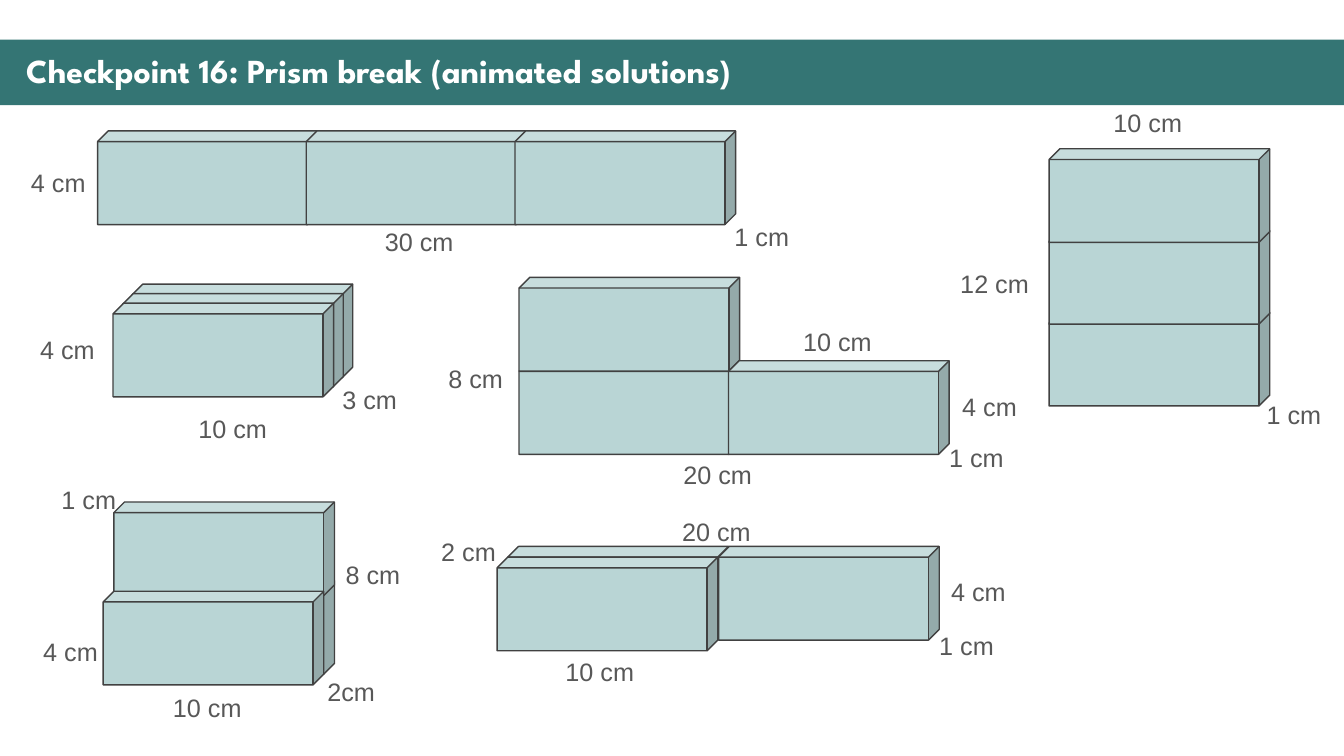
"""Build the checkpoint slide of prisms assembled from equal blocks."""
import dataclasses

import pptx
import pptx.dml.color
import pptx.enum.shapes
import pptx.enum.text
import pptx.util

Cm = pptx.util.Cm
Pt = pptx.util.Pt
Color = pptx.dml.color.RGBColor.from_string


@dataclasses.dataclass(frozen=True)
class Theme:
    band: str = "347574"
    block: str = "B9D5D5"
    edge: str = "414141"
    label_color: str = "585858"
    title_color: str = "FFFFFF"
    title: dict = dataclasses.field(default_factory=lambda: {
        "name": "League Spartan", "size": Pt(24), "bold": True})
    title_end: dict = dataclasses.field(default_factory=lambda: {
        "name": "Arial", "size": Pt(22), "bold": True})
    label: dict = dataclasses.field(default_factory=lambda: {
        "name": "Arial", "size": Pt(18)})


FIGURES = [
    {"origin": (2.46, 3.3), "step": (5.26, 2.1, 0.27),
     "cells": [(0, 0, 0), (1, 0, 0), (2, 0, 0)],
     "labels": [("30 cm", 9.45, 5.59), ("4 cm", 0.53, 4.09), ("1 cm", 18.26, 5.46)]},
    {"origin": (26.44, 7.87), "step": (5.26, 2.06, 0.27),
     "cells": [(0, 0, 0), (0, 1, 0), (0, 2, 0)],
     "labels": [("10 cm", 27.81, 2.59), ("12 cm", 23.95, 6.63), ("1 cm", 31.67, 9.93)]},
    {"origin": (3.33, 7.16), "step": (5.26, 2.1, 0.24),
     "cells": [(0, 0, 0), (0, 0, 1), (0, 0, 2)],
     "labels": [("10 cm", 4.75, 10.29), ("4 cm", 0.76, 8.31), ("3 cm", 8.38, 9.55)]},
    {"origin": (2.87, 14.63), "step": (5.26, 1.98, 0.27),
     "cells": [(0, 0, 0), (0, 1, 0), (0, 0, 1)],
     "labels": [("2cm", 8.0, 16.92), ("10 cm", 4.11, 17.32), ("1 cm", 1.3, 12.07),
                ("4 cm", 0.84, 15.9), ("8 cm", 8.46, 13.97)]},
    {"origin": (12.8, 13.77), "step": (5.31, 2.1, 0.27),
     "cells": [(0, 0, 0), (0, 0, 1), (1, 0, 0)],
     "labels": [("20 cm", 16.94, 12.88), ("2 cm", 10.87, 13.39), ("1 cm", 23.42, 15.75),
                ("4 cm", 23.72, 14.4), ("10 cm", 14.0, 16.41)]},
    {"origin": (13.08, 9.09), "step": (5.28, 2.1, 0.27),
     "cells": [(0, 0, 0), (0, 1, 0), (1, 0, 0)],
     "labels": [("20 cm", 16.97, 11.46), ("8 cm", 11.05, 9.02), ("1 cm", 23.67, 11.02),
                ("4 cm", 24.0, 9.73), ("10 cm", 19.99, 8.1)]},
]


class PrismSlide:
    """Hold the theme and the current slide, and draw its elements."""

    label_widths = {3: 1.73, 4: 1.91, 5: 2.26}

    def __init__(self, deck, theme):
        self.theme = theme
        self.slide = deck.slides.add_slide(deck.slide_layouts[5])

    def add_span(self, para, text, style, color):
        """Append one formatted run to a paragraph."""
        span = para.add_run()
        span.text = text
        for name, value in style.items():
            setattr(span.font, name, value)
        span.font.color.rgb = Color(color)

    def title(self, text, ending):
        """Turn the title placeholder into the heading band."""
        box = self.slide.shapes.title
        box.left, box.top, box.width, box.height = Cm(0), Cm(1), Cm(33.87), Cm(1.65)
        box.fill.solid()
        box.fill.fore_color.rgb = Color(self.theme.band)
        frame_format = {
            "margin_left": Cm(0.66), "margin_top": 0, "margin_bottom": 0,
            "word_wrap": True,
            "auto_size": pptx.enum.text.MSO_AUTO_SIZE.NONE,
            "vertical_anchor": pptx.enum.text.MSO_ANCHOR.MIDDLE,
        }
        for name, value in frame_format.items():
            setattr(box.text_frame, name, value)
        para = box.text_frame.paragraphs[0]
        para.alignment = pptx.enum.text.PP_ALIGN.LEFT
        para.line_spacing = 0.9
        self.add_span(para, text, self.theme.title, self.theme.title_color)
        self.add_span(para, ending, self.theme.title_end, self.theme.title_color)

    def block(self, group, left, top):
        """Draw one block of a prism."""
        cube = group.shapes.add_shape(
            pptx.enum.shapes.MSO_SHAPE.CUBE, Cm(left), Cm(top), Cm(5.56), Cm(2.36))
        cube.adjustments[0] = 0.114
        cube.shadow.inherit = False
        cube.fill.solid()
        cube.fill.fore_color.rgb = Color(self.theme.block)
        cube.line.color.rgb = Color(self.theme.edge)
        cube.line.width = Pt(1)

    def label(self, group, text, left, top):
        """Write one measurement."""
        width = self.label_widths[len(text)]
        box = group.shapes.add_textbox(Cm(left), Cm(top), Cm(width), Cm(1.02))
        box.text_frame.word_wrap = False
        box.text_frame.auto_size = pptx.enum.text.MSO_AUTO_SIZE.SHAPE_TO_FIT_TEXT
        self.add_span(box.text_frame.paragraphs[0], text,
                      self.theme.label, self.theme.label_color)

    def figure(self, origin, step, cells, labels):
        """Group blocks, placed by column, row and layer, with their measurements."""
        group = self.slide.shapes.add_group_shape()
        across, up, depth = step
        for column, row, layer in cells:
            self.block(group,
                       origin[0] + column * across - layer * depth,
                       origin[1] - row * up + layer * depth)
        for text, left, top in labels:
            self.label(group, text, left, top)


def main():
    """Build and save the deck."""
    deck = pptx.Presentation()
    deck.slide_width, deck.slide_height = Cm(33.87), Cm(19.05)
    page = PrismSlide(deck, Theme())
    page.title("Checkpoint 16: Prism break (animated solutions", ")")
    for figure in FIGURES:
        page.figure(**figure)
    deck.save("out.pptx")


if __name__ == "__main__":
    main()
